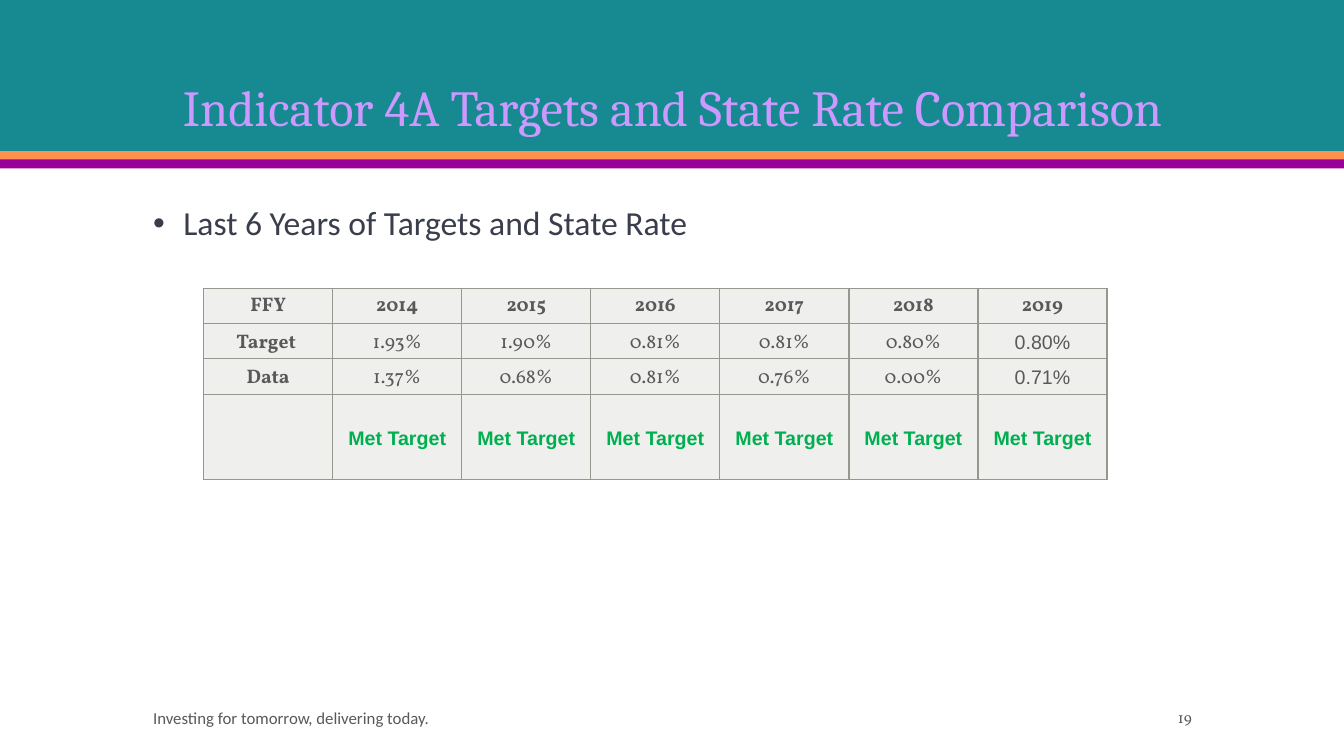
"""Build the Indicator 4A slide comparing targets with state rates."""
from lxml import etree
from pptx import Presentation
from pptx.dml.color import RGBColor
from pptx.enum.shapes import MSO_SHAPE
from pptx.enum.text import MSO_ANCHOR, PP_ALIGN
from pptx.oxml.ns import qn
from pptx.util import Inches, Pt

RECTANGLE = MSO_SHAPE.RECTANGLE
TOP, MIDDLE, BOTTOM = MSO_ANCHOR.TOP, MSO_ANCHOR.MIDDLE, MSO_ANCHOR.BOTTOM
LEFT, CENTER, RIGHT = PP_ALIGN.LEFT, PP_ALIGN.CENTER, PP_ALIGN.RIGHT
GRAY, GREEN, CELL_FILL, BORDER = "595959", "00B050", "EFEFEE", "969890"


def color(value):
    return RGBColor.from_string(value)


def add_run(paragraph, text, size, font, text_color, bold=False):
    run = paragraph.add_run()
    run.text = text
    run.font.size = Pt(size)
    run.font.name = font
    run.font.bold = bold
    run.font.color.rgb = color(text_color)


presentation = Presentation()
presentation.slide_width = Inches(13.33)
presentation.slide_height = Inches(7.5)
slide = presentation.slides.add_slide(presentation.slide_layouts[6])

for top, height, band_color in [(0, 1.5, "178A91"), (1.5, 0.09, "FF914D"), (1.58, 0.09, "990099")]:
    band = slide.shapes.add_shape(RECTANGLE, 0, Inches(top), Inches(13.33), Inches(height))
    band.shadow.inherit = False
    band.fill.solid()
    band.fill.fore_color.rgb = color(band_color)
    band.line.fill.background()

texts = [
    ("Indicator 4A Targets and State Rate Comparison",
     (1.42, 0.28, 10.5, 1.13), BOTTOM, CENTER, 0.9, 36, "Cambria", "CC99FF"),
    ("Last 6 Years of Targets and State Rate",
     (1.42, 2, 10.5, 0.56), TOP, LEFT, 0.9, 24, "Calibri", "3A3D4B"),
    ("Investing for tomorrow, delivering today.",
     (1.42, 6.97, 6.83, 0.3), MIDDLE, LEFT, 1.0, 12, "Calibri", GRAY),
    ("19", (10.42, 6.97, 1.5, 0.3), MIDDLE, RIGHT, 1.0, 11, "Vollkorn", GRAY),
]
paragraphs = []
for text, place, anchor, alignment, spacing, size, font, text_color in texts:
    box = slide.shapes.add_textbox(*[Inches(length) for length in place])
    box.text_frame.word_wrap = True
    box.text_frame.vertical_anchor = anchor
    paragraph = box.text_frame.paragraphs[0]
    paragraph.alignment = alignment
    paragraph.line_spacing = spacing
    add_run(paragraph, text, size, font, text_color)
    paragraphs.append(paragraph)

bullet_paragraph = paragraphs[1]
bullet_paragraph.space_before = Pt(18)
properties = bullet_paragraph._p.get_or_add_pPr()
properties.set("marL", str(Inches(0.3)))
properties.set("indent", str(Inches(-0.3)))
etree.SubElement(properties, qn("a:buFont")).set("typeface", "Arial")
etree.SubElement(properties, qn("a:buChar")).set("char", "•")

rows = [
    ["FFY", "2014", "2015", "2016", "2017", "2018", "2019"],
    ["Target ", "1.93%", "1.90%", "0.81%", "0.81%", "0.80%", "0.80%"],
    ["Data", "1.37%", "0.68%", "0.81%", "0.76%", "0.00%", "0.71%"],
    [""] + ["Met Target"] * 6,
]
row_heights = [0.35, 0.35, 0.35, 0.85]
last_row, last_column = len(rows) - 1, len(rows[0]) - 1
frame = slide.shapes.add_table(len(rows), len(rows[0]), Inches(2.02), Inches(2.86),
                               Inches(8.96), Inches(sum(row_heights)))
table = frame.table
for column in table.columns:
    column.width = Inches(1.28)
for row_index, values in enumerate(rows):
    table.rows[row_index].height = Inches(row_heights[row_index])
    for column_index, value in enumerate(values):
        cell = table.cell(row_index, column_index)
        cell.margin_left = cell.margin_right = Inches(0.07)
        cell.margin_top = cell.margin_bottom = 0
        cell.vertical_anchor = MIDDLE if row_index else TOP
        cell_properties = cell._tc.get_or_add_tcPr()
        for side in ("a:lnL", "a:lnR", "a:lnT", "a:lnB"):
            line = etree.SubElement(cell_properties, qn(side), w=str(Pt(1)))
            line_fill = etree.SubElement(line, qn("a:solidFill"))
            etree.SubElement(line_fill, qn("a:srgbClr"), val=BORDER)
        cell.fill.solid()
        cell.fill.fore_color.rgb = color(CELL_FILL)
        if value:
            paragraph = cell.text_frame.paragraphs[0]
            paragraph.alignment = CENTER
            paragraph.line_spacing = 1.15
            paragraph.space_before = paragraph.space_after = Pt(3)
            is_result = row_index == last_row
            is_arial = is_result or (row_index > 0 and column_index == last_column)
            add_run(paragraph, value, 14, "Arial" if is_arial else "Vollkorn",
                    GREEN if is_result else GRAY,
                    bold=is_result or row_index == 0 or column_index == 0)

presentation.save("out.pptx")
